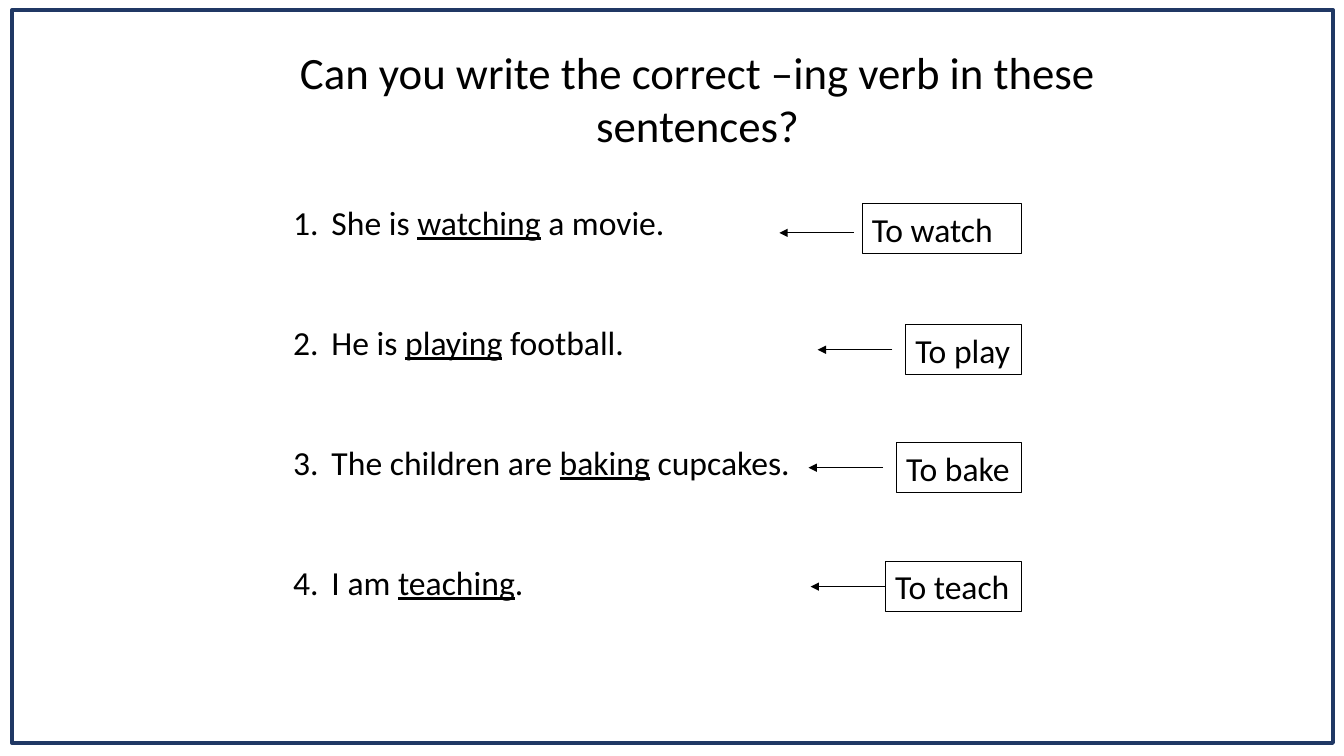
from dataclasses import dataclass

from lxml.etree import SubElement
from pptx import Presentation
from pptx.dml.color import RGBColor
from pptx.enum.shapes import MSO_CONNECTOR as Connector, MSO_SHAPE as Shape
from pptx.enum.text import MSO_ANCHOR as Anchor, PP_ALIGN as Align
from pptx.oxml.ns import qn
from pptx.shapes.autoshape import Shape as Box
from pptx.slide import Slide
from pptx.text.text import TextFrame, _Paragraph as Paragraph
from pptx.util import Inches, Pt


@dataclass(frozen=True)
class Theme:
    font: str = "Calibri"
    ink: RGBColor = RGBColor(0x00, 0x00, 0x00)
    frame: RGBColor = RGBColor(0x20, 0x38, 0x64)
    title_size: int = 32
    body_size: int = 24
    sentence_gap: int = 57
    frame_width: float = 3
    box_width: float = 0.75
    arrow_width: float = 0.5


@dataclass(frozen=True)
class Exercise:
    before: str
    verb: str
    after: str
    infinitive: str
    box_left: float
    box_top: float
    arrow_start: float
    arrow_y: float
    joined: bool = False


THEME = Theme()
BOX_RIGHT = 10.13
BOX_HEIGHT = 0.5
ARROW_LENGTH = 0.74
NUMBER_INDENT = Inches(0.38)
EXERCISES = [
    Exercise("She is ", "watching", " a movie.", "To watch", 8.55, 2.02, 8.47, 2.31),
    Exercise("He is ", "playing", " football.", "To play", 8.98, 3.22, 8.85, 3.47),
    Exercise("The children are ", "baking", " cupcakes.", "To bake", 8.89, 4.39, 8.76, 4.64),
    Exercise("I am ", "teaching", ".", "To teach", 8.78, 5.57, 8.78, 5.82, joined=True),
]


def style_runs(para: Paragraph, size: int) -> None:
    for span in para.runs:
        span.font.name = THEME.font
        span.font.size = Pt(size)
        span.font.color.rgb = THEME.ink


def add_outline(page: Slide, left: float, top: float, width: float, height: float,
                color: RGBColor, weight: float) -> Box:
    box = page.shapes.add_shape(
        Shape.RECTANGLE, Inches(left), Inches(top), Inches(width), Inches(height))
    box.shadow.inherit = False
    box.fill.background()
    box.line.color.rgb = color
    box.line.width = Pt(weight)
    return box


def add_text_area(page: Slide, left: float, top: float, width: float, height: float) -> TextFrame:
    area = page.shapes.add_textbox(Inches(left), Inches(top), Inches(width), Inches(height))
    area.text_frame.word_wrap = True
    return area.text_frame


def add_title(page: Slide) -> None:
    para = add_text_area(page, 2.71, 0.39, 8.42, 1.18).paragraphs[0]
    para.text = "Can you write the correct –ing verb in these sentences?"
    para.alignment = Align.CENTER
    style_runs(para, THEME.title_size)


def number_paragraph(para: Paragraph) -> None:
    properties = para._p.get_or_add_pPr()
    properties.set("marL", str(NUMBER_INDENT))
    properties.set("indent", str(-NUMBER_INDENT))
    SubElement(properties, qn("a:buFont"), typeface=THEME.font)
    SubElement(properties, qn("a:buAutoNum"), type="arabicPeriod")


def add_sentences(page: Slide) -> None:
    frame = add_text_area(page, 2.81, 1.95, 5.17, 4.14)
    for index, exercise in enumerate(EXERCISES):
        para = frame.add_paragraph() if index else frame.paragraphs[0]
        for words in (exercise.before, exercise.verb, exercise.after):
            span = para.add_run()
            span.text = words
            span.font.underline = words == exercise.verb
        para.space_after = Pt(THEME.sentence_gap)
        number_paragraph(para)
        style_runs(para, THEME.body_size)


def add_infinitive(page: Slide, exercise: Exercise) -> Box:
    box = add_outline(page, exercise.box_left, exercise.box_top,
                      BOX_RIGHT - exercise.box_left, BOX_HEIGHT,
                      THEME.ink, THEME.box_width)
    frame = box.text_frame
    frame.word_wrap = True
    frame.vertical_anchor = Anchor.TOP
    frame.text = exercise.infinitive
    frame.paragraphs[0].alignment = Align.LEFT
    style_runs(frame.paragraphs[0], THEME.body_size)
    return box


def add_arrow(page: Slide, exercise: Exercise, box: Box) -> None:
    height = Inches(exercise.arrow_y)
    arrow = page.shapes.add_connector(
        Connector.STRAIGHT, Inches(exercise.arrow_start), height,
        Inches(exercise.arrow_start - ARROW_LENGTH), height)
    if exercise.joined:
        arrow.begin_connect(box, 1)
    arrow.line.color.rgb = THEME.ink
    arrow.line.width = Pt(THEME.arrow_width)
    SubElement(arrow.line._get_or_add_ln(), qn("a:tailEnd"), type="triangle")
    SubElement(arrow._element.spPr, qn("a:effectLst"))


def main() -> None:
    deck = Presentation()
    deck.slide_width = Inches(13.33)
    deck.slide_height = Inches(7.5)
    page = deck.slides.add_slide(deck.slide_layouts[6])
    add_outline(page, 0.12, 0.1, 13.1, 7.27, THEME.frame, THEME.frame_width)
    add_sentences(page)
    add_title(page)
    for exercise in EXERCISES:
        box = add_infinitive(page, exercise)
        add_arrow(page, exercise, box)
    deck.save("out.pptx")


if __name__ == "__main__":
    main()
